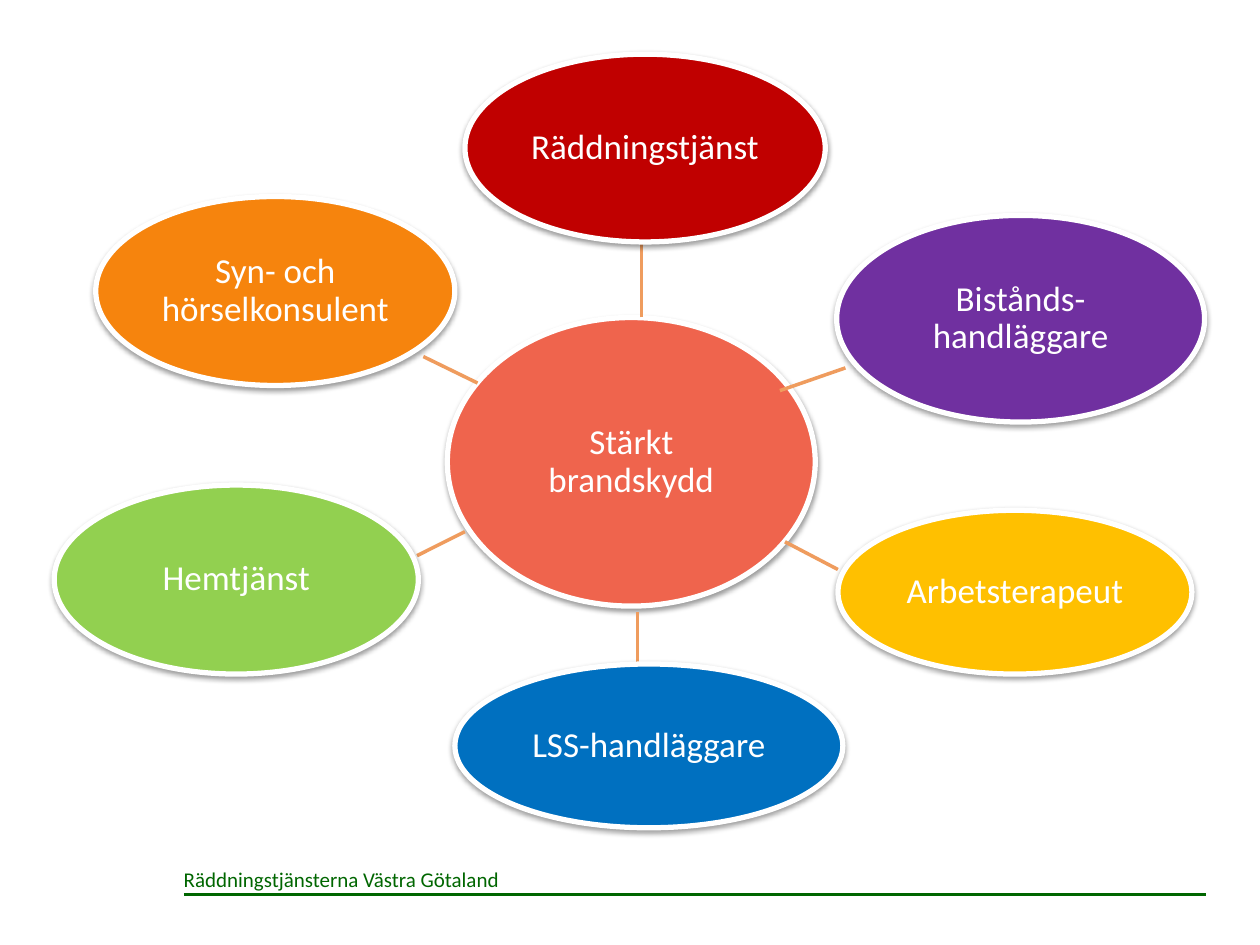
import dataclasses
import lxml.etree
import pptx
import pptx.dml.color
import pptx.enum.shapes
import pptx.enum.text
import pptx.oxml.ns
import pptx.util

Inches = pptx.util.Inches
Pt = pptx.util.Pt
qn = pptx.oxml.ns.qn


@dataclasses.dataclass(frozen=True)
class Theme:
    font: str = "Calibri"
    label: int = 20
    foot: int = 12
    white: str = "FFFFFF"
    green: str = "006600"
    spoke: str = "EF9C5E"
    hub: str = "EF644D"
    shade: str = "000000"


@dataclasses.dataclass(frozen=True)
class Node:
    text: str
    left: float
    top: float
    width: float
    height: float
    fill: str


@dataclasses.dataclass(frozen=True)
class Line:
    x1: float
    y1: float
    x2: float
    y2: float


THEME = Theme()
HUB = Node("Stärkt brandskydd", 3.55, 2.52, 2.92, 2.29, THEME.hub)

# Each outer role with the spoke that ties it to the hub
ROLES = [
    (Line(5.09, 2.52, 5.09, 1.88),
     Node("Räddningstjänst", 3.69, 0.43, 2.86, 1.49, "C00000")),
    (Line(6.71, 2.92, 6.19, 3.1),
     Node("Bistånds-handläggare", 6.64, 1.71, 2.92, 1.64, "7030A0")),
    (Line(6.23, 4.3, 6.65, 4.52),
     Node("Arbetsterapeut", 6.65, 4.05, 2.81, 1.3, "FFC000")),
    (Line(5.06, 4.86, 5.06, 5.32),
     Node("LSS-handläggare", 3.61, 5.27, 3.08, 1.3, "0070C0")),
    (Line(3.31, 4.41, 3.69, 4.22),
     Node("Hemtjänst", 0.43, 3.85, 2.89, 1.5, "92D050")),
    (Line(3.79, 3.04, 3.36, 2.83),
     Node("Syn- och hörselkonsulent", 0.76, 1.56, 2.85, 1.5, "F6840D")),
]


def tint(code: str) -> pptx.dml.color.RGBColor:
    return pptx.dml.color.RGBColor.from_string(code)


def add_run(para, text: str, size: int, color: str) -> None:
    run = para.add_run()
    run.text = text
    run.font.name = THEME.font
    run.font.size = Pt(size)
    run.font.color.rgb = tint(color)


def add_shade(shape) -> None:
    """Give the shape a soft shadow straight below it."""
    shape.shadow.inherit = False
    effects = shape._element.spPr.find(qn("a:effectLst"))
    outer = lxml.etree.SubElement(
        effects, qn("a:outerShdw"), blurRad=str(Pt(3.1)), dist=str(Pt(1.6)),
        dir="5400000", rotWithShape="0")
    color = lxml.etree.SubElement(outer, qn("a:srgbClr"), val=THEME.shade)
    lxml.etree.SubElement(color, qn("a:alpha"), val="38000")


def add_line(slide, line: Line, color: str, width: float) -> None:
    link = slide.shapes.add_connector(
        pptx.enum.shapes.MSO_CONNECTOR.STRAIGHT,
        Inches(line.x1), Inches(line.y1), Inches(line.x2), Inches(line.y2))
    link.line.color.rgb = tint(color)
    link.line.width = Pt(width)
    lxml.etree.SubElement(link._element.spPr, qn("a:effectLst"))


def add_node(slide, node: Node) -> None:
    oval = slide.shapes.add_shape(
        pptx.enum.shapes.MSO_SHAPE.OVAL, Inches(node.left), Inches(node.top),
        Inches(node.width), Inches(node.height))
    oval.fill.solid()
    oval.fill.fore_color.rgb = tint(node.fill)
    oval.line.color.rgb = tint(THEME.white)
    oval.line.width = Pt(3)
    add_shade(oval)
    frame = oval.text_frame
    frame.word_wrap = True
    frame.vertical_anchor = pptx.enum.text.MSO_ANCHOR.MIDDLE
    frame.margin_left = frame.margin_right = Inches(0.03)
    frame.margin_top = frame.margin_bottom = Inches(0.01)
    para = frame.paragraphs[0]
    para.alignment = pptx.enum.text.PP_ALIGN.CENTER
    para.line_spacing = 0.9
    add_run(para, node.text, THEME.label, THEME.white)


def add_foot(slide) -> None:
    add_line(slide, Line(1.46, 7.1, 9.57, 7.1), THEME.green, 1.5)
    box = slide.shapes.add_textbox(
        Inches(1.36), Inches(6.83), Inches(3.07), Inches(0.3))
    box.text_frame.word_wrap = True
    add_run(box.text_frame.paragraphs[0], "Räddningstjänsterna Västra Götaland",
            THEME.foot, THEME.green)


def main() -> None:
    deck = pptx.Presentation()
    deck.slide_width, deck.slide_height = Inches(10), Inches(7.5)
    slide = deck.slides.add_slide(deck.slide_layouts[6])

    # Footer, then the hub with its spokes and roles
    add_foot(slide)
    add_node(slide, HUB)
    for spoke, role in ROLES:
        add_line(slide, spoke, THEME.spoke, 2)
        add_node(slide, role)
    deck.save("out.pptx")


if __name__ == "__main__":
    main()
